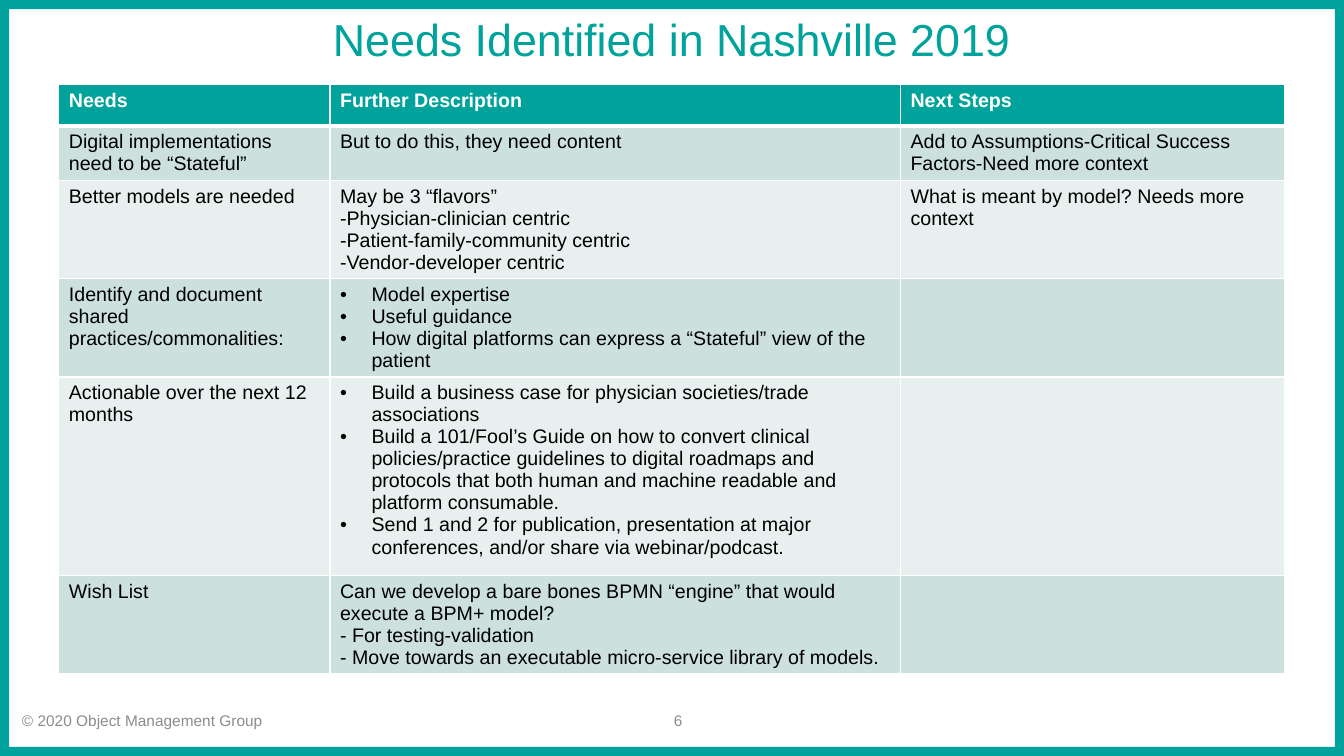
from dataclasses import dataclass

from lxml.etree import SubElement
from pptx import Presentation
from pptx.dml.color import RGBColor
from pptx.enum.shapes import MSO_SHAPE as Shape
from pptx.enum.text import MSO_ANCHOR as Anchor, PP_ALIGN as Align
from pptx.oxml.ns import qn
from pptx.util import Pt

COLORS = {"teal": "00A39C", "white": "FFFFFF", "black": "000000", "gray": "8C8C8C",
          "dark band": "CCE0DE", "light band": "E7F0EF"}
COLUMN_WIDTHS = [193.7, 407.5, 274.3]
BULLET_INDENT = 22.5


@dataclass
class NeedRow:
    height: float
    need: str
    description: list[str]
    next_steps: str = ""
    bulleted: bool = False


@dataclass
class Footer:
    left: float
    width: float
    text: str
    align: Align


HEADER = NeedRow(29.5, "Needs", ["Further Description"], "Next Steps")
NEEDS = [
    NeedRow(39, "Digital implementations need to be “Stateful”",
            ["But to do this, they need content"],
            "Add to Assumptions-Critical Success Factors-Need more context"),
    NeedRow(70, "Better models are needed",
            ["May be 3 “flavors”", "-Physician-clinician centric",
             "-Patient-family-community centric", "-Vendor-developer centric"],
            "What is meant by model? Needs more context"),
    NeedRow(70, "Identify and document shared practices/commonalities:",
            ["Model expertise", "Useful guidance",
             "How digital platforms can express a “Stateful” view of the patient"],
            bulleted=True),
    NeedRow(142, "Actionable over the next 12 months",
            ["Build a business case for physician societies/trade associations",
             "Build a 101/Fool’s Guide on how to convert clinical policies/practice guidelines "
             "to digital roadmaps and protocols that both human and machine readable and "
             "platform consumable.",
             "Send 1 and 2 for publication, presentation at major conferences, "
             "and/or share via webinar/podcast."],
            bulleted=True),
    NeedRow(70, "Wish List",
            ["Can we develop a bare bones BPMN “engine” that would execute a BPM+ model?",
             "- For testing-validation",
             "- Move towards an executable micro-service library of models."]),
]
FOOTERS = [
    Footer(8.6, 314, "© 2020 Object Management Group", Align.LEFT),
    Footer(465, 29.5, "6", Align.RIGHT),
]


def rgb(name: str) -> RGBColor:
    return RGBColor.from_string(COLORS[name])


def set_values(target, values: dict) -> None:
    for name, value in values.items():
        setattr(target, name, value)


def style_font(font, size: float, color: str, bold: bool = False) -> None:
    set_values(font, {"name": "Arial", "size": Pt(size), "bold": bold})
    font.color.rgb = rgb(color)


def add_bullet(para) -> None:
    properties = para._p.get_or_add_pPr()
    properties.set("marL", str(Pt(BULLET_INDENT)))
    properties.set("indent", str(-Pt(BULLET_INDENT)))
    SubElement(properties, qn("a:buFont")).set("typeface", "Arial")
    SubElement(properties, qn("a:buChar")).set("char", "•")


def add_borders(cell, widths: dict[str, float]) -> None:
    properties = cell._tc.get_or_add_tcPr()
    for side, width in widths.items():
        line = SubElement(properties, qn(f"a:ln{side}"))
        line.set("w", str(Pt(width)))
        fill = SubElement(line, qn("a:solidFill"))
        SubElement(fill, qn("a:srgbClr")).set("val", COLORS["white"])


def fill_row(table, index: int, row: NeedRow) -> None:
    is_header = index == 0
    band = "teal" if is_header else "dark band" if index % 2 else "light band"
    above, below = (3 if index == 1 else 1), (3 if is_header else 1)
    table.rows[index].height = Pt(row.height)
    contents = [[row.need], row.description, [row.next_steps]]
    for column, lines in enumerate(contents):
        cell = table.cell(index, column)
        add_borders(cell, {"L": 1, "R": 1, "T": above, "B": below})
        cell.fill.solid()
        cell.fill.fore_color.rgb = rgb(band)
        cell.text = "\n".join(lines)
        for para in cell.text_frame.paragraphs:
            if row.bulleted and column == 1:
                add_bullet(para)
            style_font(para.font, 14, "white" if is_header else "black", is_header)
            for span in para.runs:
                style_font(span.font, 14, "white" if is_header else "black", is_header)


def add_footer(page, footer: Footer) -> None:
    box = page.shapes.add_textbox(Pt(footer.left), Pt(500.4), Pt(footer.width), Pt(28.8))
    set_values(box.text_frame, {"word_wrap": True, "vertical_anchor": Anchor.MIDDLE})
    para = box.text_frame.paragraphs[0]
    para.alignment = footer.align
    span = para.add_run()
    span.text = footer.text
    style_font(span.font, 11, "gray")


def main() -> None:
    deck = Presentation()
    set_values(deck, {"slide_width": Pt(960), "slide_height": Pt(540)})
    page = deck.slides.add_slide(deck.slide_layouts[5])

    # Teal frame around the page
    frame = page.shapes.add_shape(Shape.FRAME, 0, 0, Pt(960), Pt(540))
    frame.adjustments[0] = 0.012
    frame.shadow.inherit = False
    frame.fill.solid()
    frame.fill.fore_color.rgb = rgb("teal")
    frame.line.fill.background()

    # Title
    title = page.shapes.title
    set_values(title, {"left": Pt(66), "top": Pt(0), "width": Pt(828), "height": Pt(60.5)})
    title.text_frame.text = "Needs Identified in Nashville 2019"
    title.text_frame.vertical_anchor = Anchor.MIDDLE
    para = title.text_frame.paragraphs[0]
    set_values(para, {"alignment": Align.CENTER, "line_spacing": 0.9})
    style_font(para.runs[0].font, 32, "teal")

    # Table of needs
    rows = [HEADER, *NEEDS]
    table = page.shapes.add_table(
        len(rows), len(COLUMN_WIDTHS), Pt(42), Pt(60.5),
        Pt(sum(COLUMN_WIDTHS)), Pt(sum(row.height for row in rows))).table
    for column, width in zip(table.columns, COLUMN_WIDTHS):
        column.width = Pt(width)
    for index, row in enumerate(rows):
        fill_row(table, index, row)

    # Copyright line and page number
    for footer in FOOTERS:
        add_footer(page, footer)

    deck.save("out.pptx")


if __name__ == "__main__":
    main()
